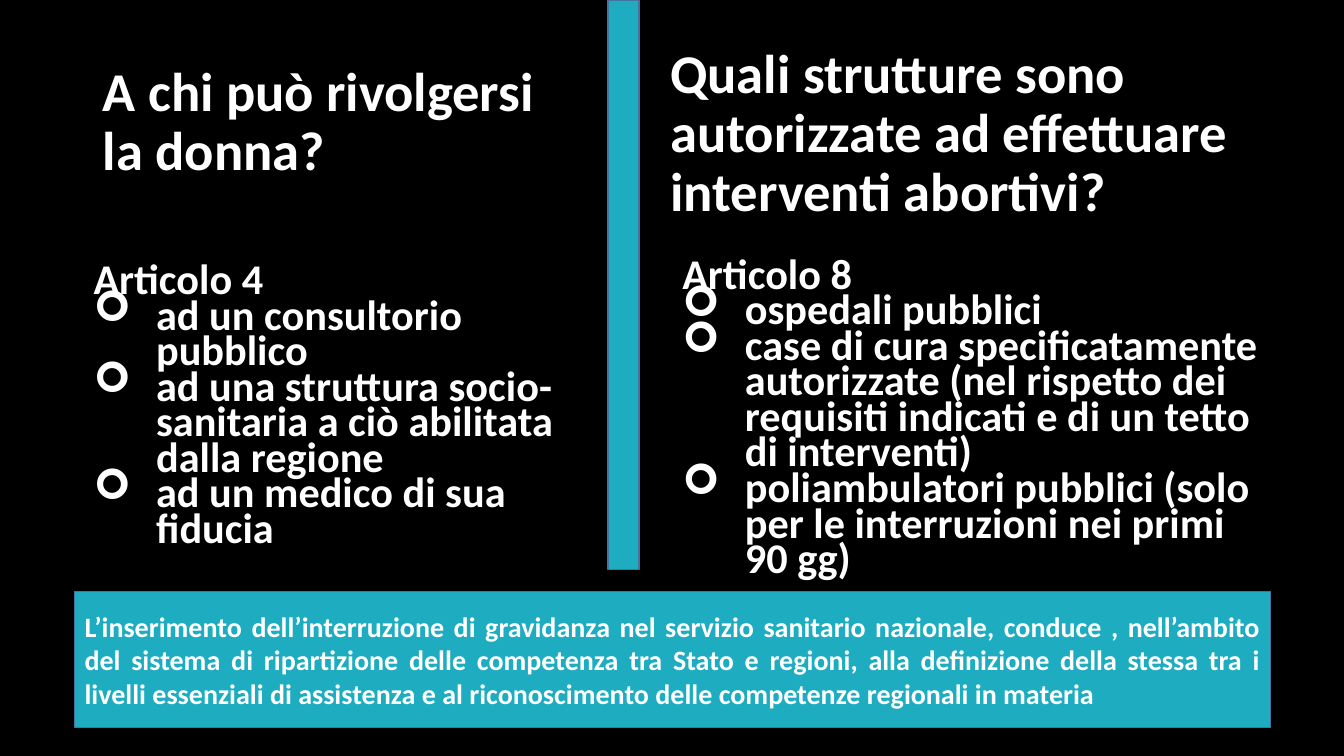
from dataclasses import dataclass

from lxml.etree import SubElement
from pptx import Presentation
from pptx.dml.color import RGBColor
from pptx.enum.shapes import MSO_SHAPE
from pptx.enum.text import MSO_ANCHOR, MSO_AUTO_SIZE, PP_ALIGN
from pptx.oxml.ns import qn
from pptx.util import Inches, Pt


@dataclass(frozen=True)
class Theme:
    font: str = "Calibri"
    background: RGBColor = RGBColor(0x00, 0x00, 0x00)
    text: RGBColor = RGBColor(0xFF, 0xFF, 0xFF)
    accent: RGBColor = RGBColor(0x1E, 0xAD, 0xC0)
    outline: RGBColor = RGBColor(0x43, 0x73, 0x9E)
    heading: float = 39
    body: float = 30.2
    note: float = 20


THEME = Theme()
INDENT = Inches(0.62)


def place(sp, box):
    sp.left, sp.top, sp.width, sp.height = (Inches(v) for v in box)


def write(sp, lines, size, spacing=1.0, align=PP_ALIGN.LEFT):
    tf = sp.text_frame
    tf.text = "\n".join(lines)
    tf.word_wrap = True
    tf.auto_size = MSO_AUTO_SIZE.NONE
    tf.vertical_anchor = MSO_ANCHOR.MIDDLE
    for p in tf.paragraphs:
        p.alignment = align
        p.line_spacing = spacing
        p.space_before = p.space_after = Pt(0)
        for r in p.runs:
            r.font.name = THEME.font
            r.font.size = Pt(size)
            r.font.bold = True
            r.font.color.rgb = THEME.text


def add_bullet(p):
    pPr = p._p.get_or_add_pPr()
    pPr.set("marL", str(INDENT))
    pPr.set("indent", str(-INDENT))
    SubElement(pPr, qn("a:buFont"), typeface="Wingdings")
    SubElement(pPr, qn("a:buChar"), char="➢")


def add_heading(sp, box, text):
    place(sp, box)
    write(sp, [text], THEME.heading, 0.9)


def add_article(slide, box, name, items):
    sp = slide.shapes.add_textbox(*(Inches(v) for v in box))
    write(sp, [name, *items], THEME.body, 0.7)
    for p in sp.text_frame.paragraphs[1:]:
        add_bullet(p)


def add_bar(slide, box):
    sp = slide.shapes.add_shape(MSO_SHAPE.RECTANGLE, *(Inches(v) for v in box))
    sp.shadow.inherit = False
    sp.fill.solid()
    sp.fill.fore_color.rgb = THEME.accent
    sp.line.color.rgb = THEME.outline
    sp.line.width = Pt(1)
    return sp


def main():
    prs = Presentation()
    prs.slide_width, prs.slide_height = Inches(13.33), Inches(7.5)
    slide = prs.slides.add_slide(prs.slide_layouts[5])
    slide.background.fill.solid()
    slide.background.fill.fore_color.rgb = THEME.background

    # Headings
    add_heading(slide.shapes.title, (0.92, 0.4, 4.89, 1.64),
                "A chi può rivolgersi la donna?")
    add_heading(slide.shapes.add_textbox(0, 0, 0, 0), (6.55, 0.4, 6.6, 1.88),
                "Quali strutture sono autorizzate ad effettuare interventi abortivi?")

    # Divider
    add_bar(slide, (6.03, 0, 0.31, 5.65))

    # Articles
    add_article(slide, (0.83, 2.46, 4.89, 3.18), "Articolo 4", [
        "ad un consultorio pubblico",
        "ad una struttura socio-sanitaria a ciò abilitata dalla regione",
        "ad un medico di sua fiducia",
    ])
    add_article(slide, (6.67, 2.46, 5.93, 3.43), "Articolo 8", [
        "ospedali pubblici",
        "case di cura specificatamente autorizzate (nel rispetto dei requisiti "
        "indicati e di un tetto di interventi)",
        "poliambulatori pubblici (solo per le interruzioni nei primi 90 gg)",
    ])

    # Closing note
    note = add_bar(slide, (0.74, 5.87, 11.86, 1.35))
    write(note, [
        "L’inserimento dell’interruzione di gravidanza nel servizio sanitario "
        "nazionale, conduce , nell’ambito del sistema di ripartizione delle "
        "competenza tra Stato e regioni, alla definizione della stessa tra i "
        "livelli essenziali di assistenza e al riconoscimento delle competenze "
        "regionali in materia"
    ], THEME.note, align=PP_ALIGN.JUSTIFY)

    prs.save("out.pptx")


if __name__ == "__main__":
    main()
